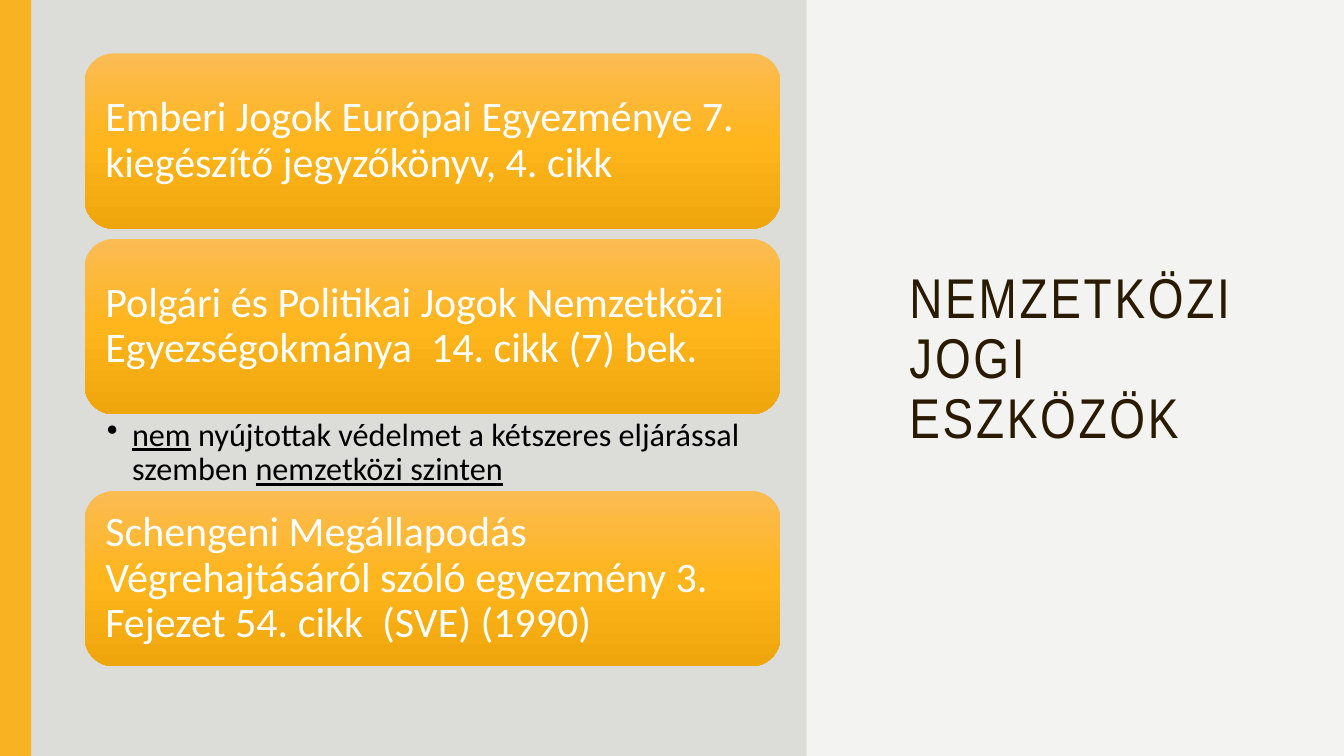
from copy import deepcopy
from math import cos, pi

from pptx import Presentation
from pptx.dml.color import RGBColor
from pptx.enum.shapes import MSO_SHAPE
from pptx.enum.text import MSO_ANCHOR, PP_ALIGN
from pptx.oxml.ns import qn
from pptx.util import Inches, Pt

RECT, ROUND = MSO_SHAPE.RECTANGLE, MSO_SHAPE.ROUNDED_RECTANGLE
MIDDLE, TOP, LEFT = MSO_ANCHOR.MIDDLE, MSO_ANCHOR.TOP, PP_ALIGN.LEFT

TITLE = "NEMZETKÖZI JOGI ESZKÖZÖK"
# Each card: its text, then the note below it as (text, underlined) pairs
CARDS = [
    ("Emberi Jogok Európai Egyezménye 7. kiegészítő jegyzőkönyv, 4. cikk", []),
    ("Polgári és Politikai Jogok Nemzetközi Egyezségokmánya  14. cikk (7) bek.", [
        ("nem", True),
        (" nyújtottak védelmet a kétszeres eljárással szemben ", False),
        ("nemzetközi szinten", True),
    ]),
    ("Schengeni Megállapodás Végrehajtásáról szóló egyezmény 3. "
     "Fejezet 54. cikk  (SVE) (1990)", []),
]
GRADE = [(0, "FBBC54"), (0.5, "FFB51C"), (1, "EFA60C")]
PAPER, PANEL, GOLD, BROWN = "F3F3F2", "DCDCD9", "F8B323", "2A1A00"
WHITE, BLACK = "FFFFFF", "000000"

WIDE, HIGH = 13.33, 7.5
CARD_X, CARD_Y, CARD_W, CARD_H = 0.84, 0.53, 6.9, 1.74
GAP, NOTE_H = 0.1, 0.76
WAVE_X, SWING, PERIOD, STEPS = 8.18, 0.1, 1.5, 120


def paint(fill, color):
    fill.solid()
    fill.fore_color.rgb = RGBColor.from_string(color)


def plain(shape):
    shape.shadow.inherit = False
    shape.line.fill.background()


def shade(fill, shape):
    """Fill the shape with the three-stop gradient, light at the top."""
    fill.gradient()
    fill.gradient_angle = 270
    stops = shape._element.spPr.find(".//" + qn("a:gsLst"))
    stops.append(deepcopy(stops[0]))
    for stop, (place, color) in zip(fill.gradient_stops, GRADE):
        stop.position = place
        stop.color.rgb = RGBColor.from_string(color)


def write(shape, parts, size, font, color, anchor, insets):
    """Put one paragraph of (text, underlined) parts into the shape."""
    frame = shape.text_frame
    frame.word_wrap = True
    frame.vertical_anchor = anchor
    (frame.margin_left, frame.margin_top,
     frame.margin_right, frame.margin_bottom) = map(Inches, insets)
    para = frame.paragraphs[0]
    para.alignment = LEFT
    para.line_spacing = 0.9
    for text, under in parts:
        run = para.add_run()
        run.text = text
        run.font.size = Pt(size)
        run.font.name = font
        run.font.color.rgb = RGBColor.from_string(color)
        if under:
            run.font.underline = True
    return para


def bullet(para, indent):
    props = para._p.get_or_add_pPr()
    props.set("marL", str(Inches(indent)))
    props.set("indent", str(-Inches(indent)))
    mark = props.makeelement(qn("a:buChar"), {"char": "•"})
    props.append(mark)


def box(x, y, w, h):
    return [Inches(v) for v in (x, y, w, h)]


deck = Presentation()
deck.slide_width, deck.slide_height = Inches(WIDE), Inches(HIGH)
slide = deck.slides.add_slide(deck.slide_layouts[6])
shapes = slide.shapes
paint(slide.background.fill, PAPER)

# Left panel with a wavy right edge
rows = [HIGH * i / STEPS for i in range(STEPS + 1)]
edge = [(WAVE_X - SWING * cos(2 * pi * y / PERIOD), y) for y in rows]
pen = shapes.build_freeform(0, 0, scale=Inches(1))
pen.add_line_segments(edge + [(0, HIGH)], close=True)
panel = pen.convert_to_shape()
paint(panel.fill, PANEL)
plain(panel)

bar = shapes.add_shape(RECT, *box(0, 0, 0.31, HIGH))
paint(bar.fill, GOLD)
plain(bar)

title = shapes.add_textbox(*box(8.92, 0.53, 3.88, 6.09))
para = write(title, [(TITLE, False)], 40, "Arial Narrow", BROWN, MIDDLE,
             (0.1, 0.05, 0.1, 0.05))
para.runs[0].font._element.set("spc", "200")

y = CARD_Y
for text, note in CARDS:
    card = shapes.add_shape(ROUND, *box(CARD_X, y, CARD_W, CARD_H))
    shade(card.fill, card)
    plain(card)
    write(card, [(text, False)], 30, "Calibri", WHITE, MIDDLE, [0.12] * 4)
    y += CARD_H
    if note:
        area = shapes.add_textbox(*box(CARD_X, y, CARD_W, NOTE_H))
        para = write(area, note, 23, "Calibri", BLACK, TOP,
                     (0.22, 0.04, 0.23, 0.04))
        bullet(para, 0.25)
        y += NOTE_H
    else:
        y += GAP

deck.save("out.pptx")
